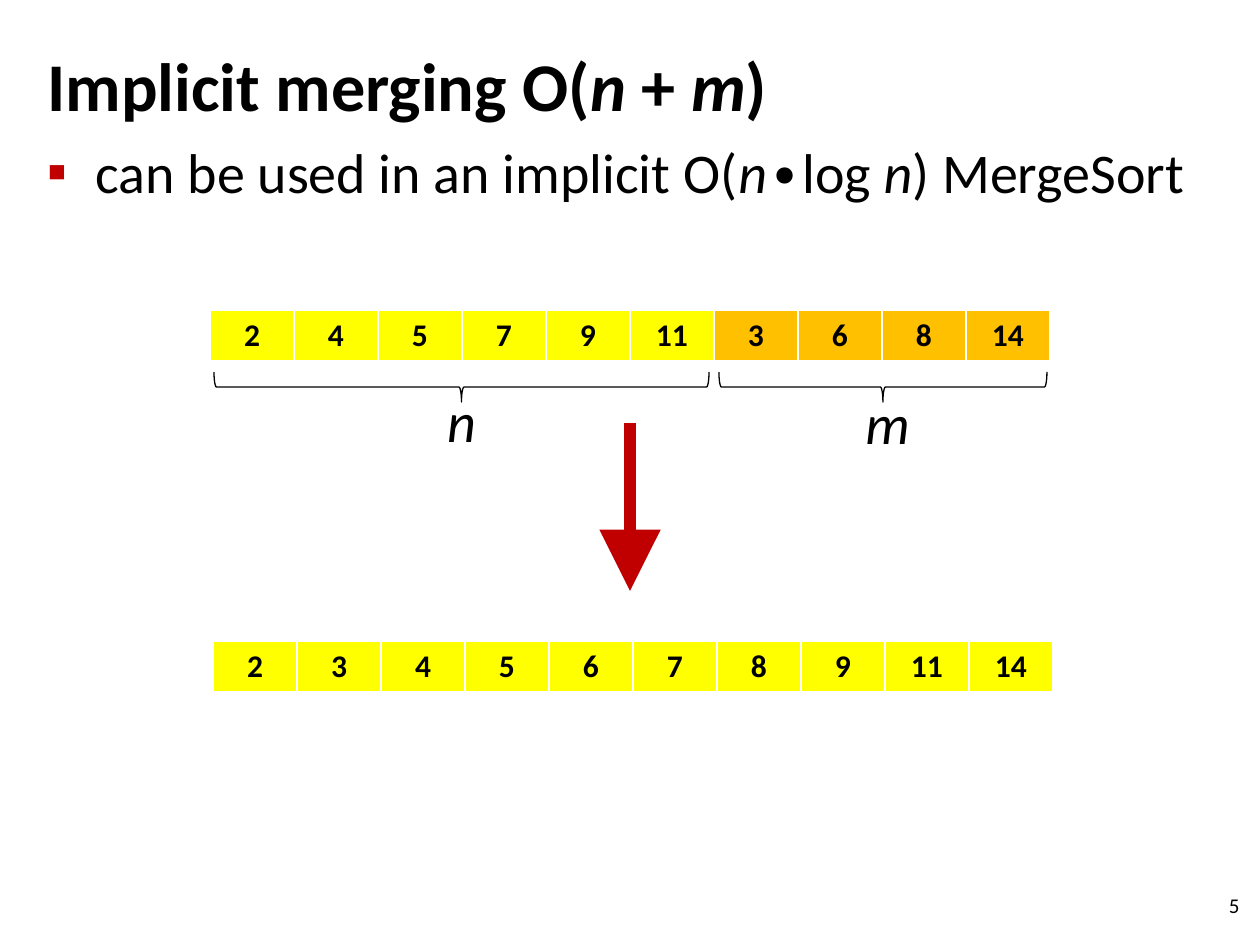
from dataclasses import dataclass
from lxml.etree import SubElement
from pptx import Presentation
from pptx.dml.color import RGBColor
from pptx.enum.shapes import MSO_CONNECTOR, MSO_SHAPE
from pptx.enum.text import MSO_ANCHOR, MSO_AUTO_SIZE, PP_ALIGN
from pptx.oxml.ns import qn
from pptx.util import Pt

SCALE = 914400 / 126


@dataclass(frozen=True)
class Theme:
    """Colours, font and type sizes of the slide."""
    font: str = "Calibri"
    ink: str = "000000"
    red: str = "C00000"
    left: str = "FFFF00"
    right: str = "FFC000"
    grid: str = "FFFFFF"
    title: int = 39
    body: int = 32
    cell: int = 18
    page: int = 12


THEME = Theme()


def px(*vals):
    """Turn pixel lengths into EMU."""
    return [round(v * SCALE) for v in vals]


def node(parent, tag, **attrs):
    """Append a DrawingML element."""
    return SubElement(parent, qn(f"a:{tag}"), attrs)


def tint(parent, color):
    """Append a solid fill to an element."""
    node(node(parent, "solidFill"), "srgbClr", val=color)


def write(frame, text, size, bold=False, italic=False, align=PP_ALIGN.LEFT,
          anchor=MSO_ANCHOR.TOP, spacing=None):
    """Fill a frame with one paragraph; asterisks toggle italics."""
    frame.word_wrap = True
    frame.vertical_anchor = anchor
    para = frame.paragraphs[0]
    para.alignment = align
    if spacing:
        para.line_spacing = spacing
    for i, part in enumerate(text.split("*")):
        if part:
            run = para.add_run()
            run.text = part
            font = run.font
            font.name, font.size, font.bold = THEME.font, Pt(size), bold
            font.italic = italic or i % 2 == 1
            font.color.rgb = RGBColor.from_string(THEME.ink)
    return para


def place(shape, box):
    """Move a placeholder to a pixel box and fix its text size."""
    shape.left, shape.top, shape.width, shape.height = px(*box)
    shape.text_frame.auto_size = MSO_AUTO_SIZE.NONE
    return shape.text_frame


def bullet(para, indent):
    """Give a paragraph a red square bullet with a hanging indent."""
    props = para._p.get_or_add_pPr()
    gap = px(indent)[0]
    props.set("marL", str(gap))
    props.set("indent", str(-gap))
    node(node(props, "buClr"), "srgbClr", val=THEME.red)
    node(props, "buFont", typeface=THEME.font)
    node(props, "buChar", char="▪")


def label(slide, text, box, size, **style):
    """Add a text box."""
    write(slide.shapes.add_textbox(*px(*box)).text_frame, text, size, **style)


def edge(cell):
    """Draw thin cell borders with a thicker bottom one."""
    props = cell._tc.get_or_add_tcPr()
    for side, width in zip("LRTB", (1, 1, 1, 3)):
        tint(node(props, f"ln{side}", w=str(Pt(width))), THEME.grid)


def array(slide, left, top, groups):
    """Draw an array as a one-row table from (values, colour) groups."""
    cells = [(val, color) for vals, color in groups for val in vals]
    table = slide.shapes.add_table(
        1, len(cells), *px(left, top, 84 * len(cells), 52)).table
    table.first_row = table.horz_banding = False
    for i, (val, color) in enumerate(cells):
        table.columns[i].width = px(84)[0]
        cell = table.cell(0, i)
        edge(cell)
        cell.fill.solid()
        cell.fill.fore_color.rgb = RGBColor.from_string(color)
        write(cell.text_frame, str(val), THEME.cell, bold=True,
              align=PP_ALIGN.CENTER)


def brace(slide, left, top, width, depth=30):
    """Draw a brace that opens upwards under a span."""
    mid = left + width / 2, top + depth / 2
    box = mid[0] - depth / 2, mid[1] - width / 2, depth, width
    shape = slide.shapes.add_shape(MSO_SHAPE.LEFT_BRACE, *px(*box))
    shape.rotation = 270
    shape.shadow.inherit = False
    shape.fill.background()
    shape.line.color.rgb = RGBColor.from_string(THEME.ink)
    shape.line.width = Pt(0.75)


def arrow(slide, x, top, end):
    """Draw a thick downward arrow."""
    link = slide.shapes.add_connector(
        MSO_CONNECTOR.STRAIGHT, *px(x, top, x, end))
    link.line.color.rgb = RGBColor.from_string(THEME.red)
    link.line.width = Pt(7)
    node(link.line._get_or_add_ln(), "tailEnd",
         type="triangle", w="lg", len="lg")
    node(link._element.spPr, "effectLst")


def main():
    """Build and save the slide."""
    deck = Presentation()
    deck.slide_width, deck.slide_height = px(1260, 945)
    slide = deck.slides.add_slide(deck.slide_layouts[1])
    head, body = slide.placeholders
    write(place(head, (35, 45, 1101, 89)), "Implicit merging O(*n *+ *m*)",
          THEME.title, bold=True, anchor=MSO_ANCHOR.MIDDLE, spacing=0.9)
    bullet(write(place(body, (35, 131, 1197, 93)),
                 "can be used in an implicit O(*n∙*log *n*) MergeSort",
                 THEME.body), 48)

    first, second = [2, 4, 5, 7, 9, 11], [3, 6, 8, 14]
    array(slide, 210, 310, [(first, THEME.left), (second, THEME.right)])
    array(slide, 213, 641, [(sorted(first + second), THEME.left)])
    brace(slide, 214, 372, 495)
    brace(slide, 719, 372, 328)
    for name, left, top in (("n", 422, 380), ("m", 848, 382)):
        label(slide, name, (left, top, 79, 81), THEME.body, italic=True,
              align=PP_ALIGN.CENTER)
    arrow(slide, 630, 423, 591)
    label(slide, "5", (958, 880, 294, 50), THEME.page,
          align=PP_ALIGN.RIGHT, anchor=MSO_ANCHOR.MIDDLE)
    deck.save("out.pptx")


if __name__ == "__main__":
    main()
